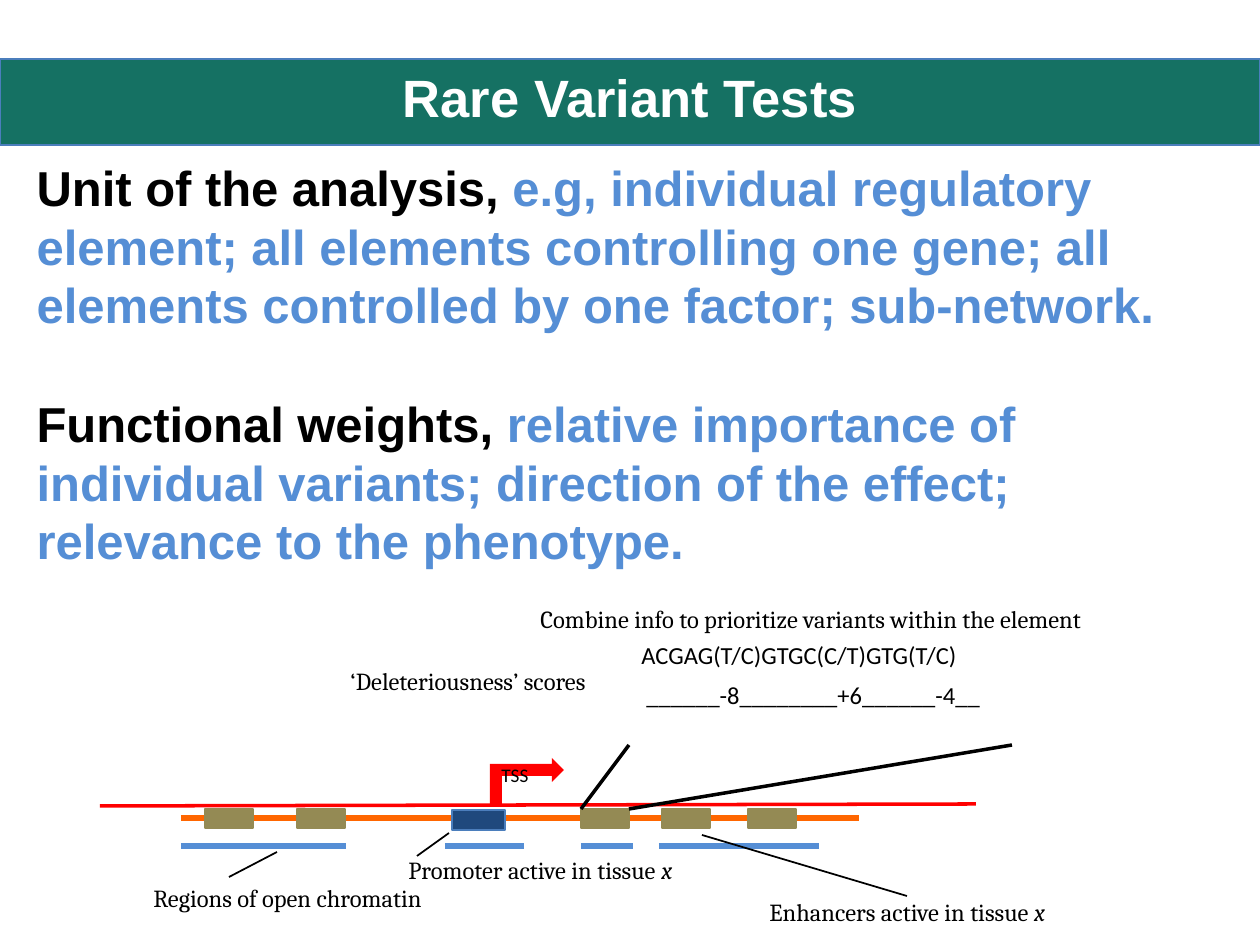
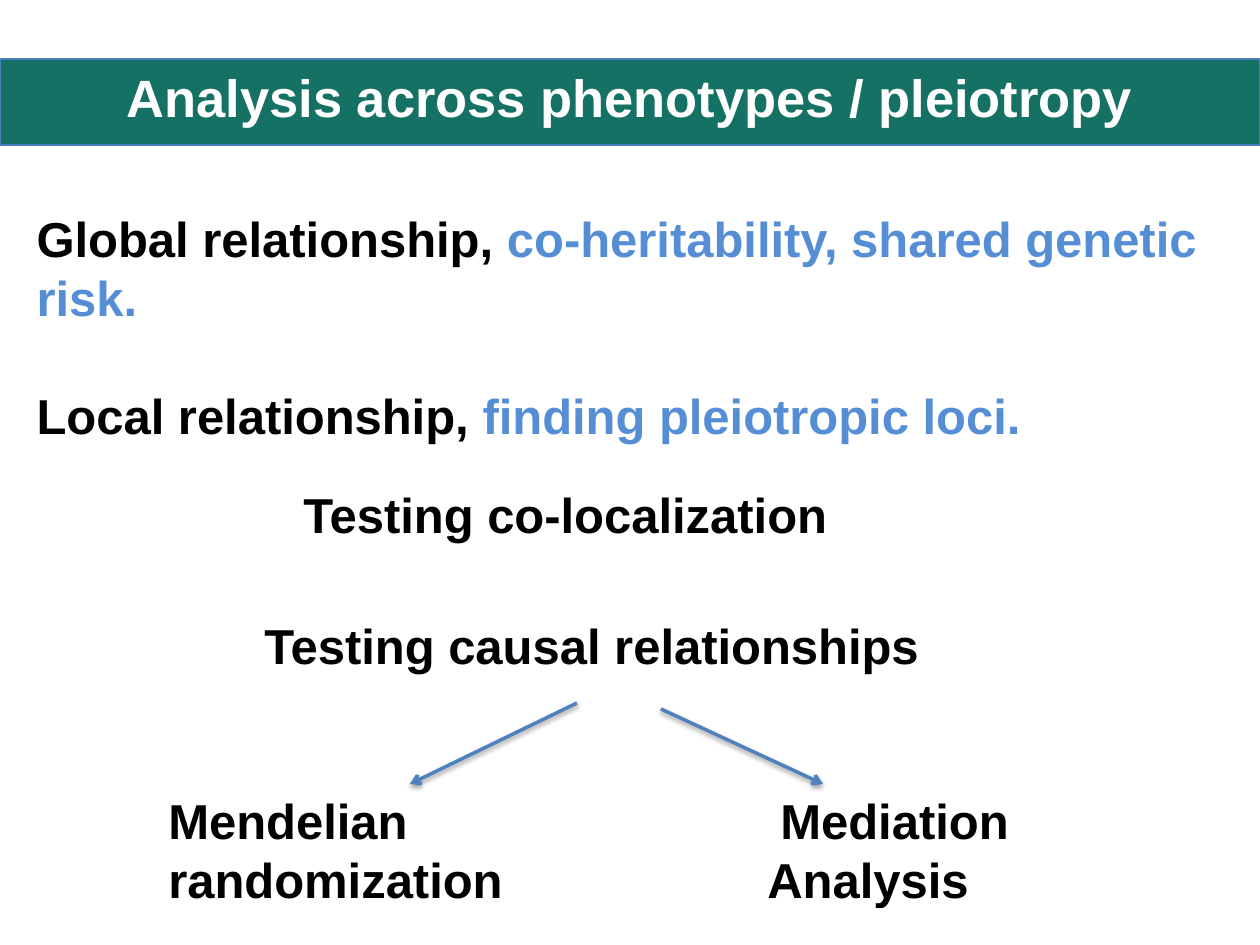
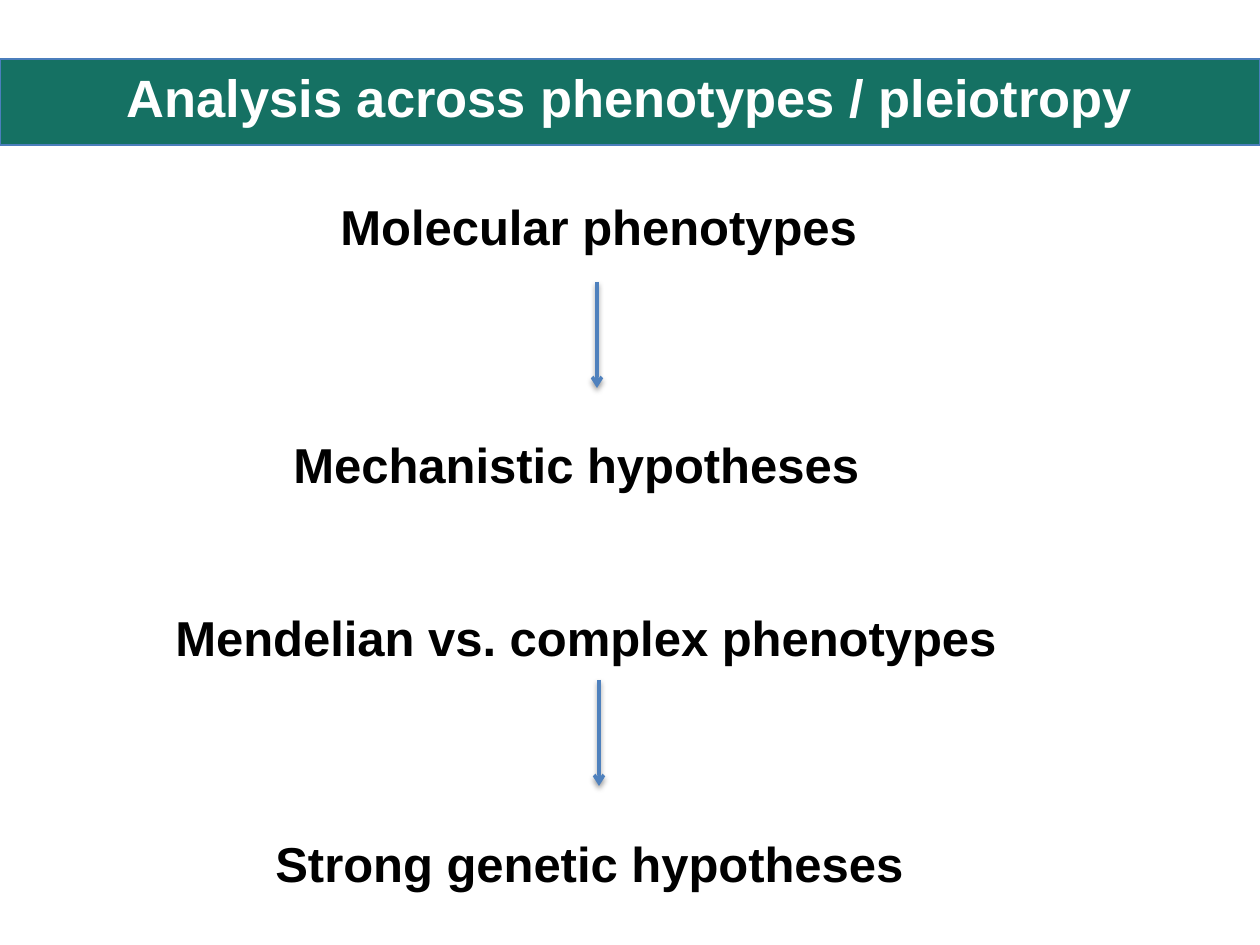
from lxml import etree
from pptx import Presentation, util as u
from pptx.dml.color import RGBColor
from pptx.enum import shapes, text
from pptx.oxml import ns

PX = 914400 / 126
BLACK, WHITE, GREEN, BLUE = "000000", "FFFFFF", "157163", "558ED5"
EDGE, ARROW, RED, TAN = "4B7EBC", "4F81BD", "FF0000", "948A54"
tint = RGBColor.from_string


def write(shape, box, paras, size=28, face="Arial", bold=True):
    shape.left, shape.top, shape.width, shape.height = [round(n * PX) for n in box]
    frame = shape.text_frame
    frame.word_wrap = True
    frame.auto_size = text.MSO_AUTO_SIZE.NONE
    frame.vertical_anchor = text.MSO_ANCHOR.TOP
    for i, runs in enumerate(paras):
        para = frame.add_paragraph() if i else frame.paragraphs[0]
        props = para._p.get_or_add_pPr()
        props.set("marL", "0")
        props.set("indent", "0")
        etree.SubElement(props, ns.qn("a:buNone"))
        para.space_before = u.Pt(34 if i else 0)
        para.font.size = u.Pt(size)
        para.font.name = face
        para.font.bold = bold
        for words, color, slant in runs:
            run = para.add_run()
            run.text = words
            run.font.color.rgb = tint(color)
            if slant:
                run.font.italic = True
    return frame


def draw(slide, ends, color, width, arrow=False):
    line = slide.shapes.add_connector(
        shapes.MSO_CONNECTOR.STRAIGHT, *[round(n * PX) for n in ends])
    line.line.color.rgb = tint(color)
    line.line.width = u.Pt(width)
    props = line.element.spPr
    glow = etree.SubElement(props, ns.qn("a:effectLst"))
    if arrow:
        etree.SubElement(props.find(ns.qn("a:ln")), ns.qn("a:tailEnd"), type="arrow")
        shade = etree.SubElement(glow, ns.qn("a:outerShdw"), blurRad="39400",
                                 dist="20300", dir="5400000", rotWithShape="0")
        black = etree.SubElement(shade, ns.qn("a:srgbClr"), val=BLACK)
        etree.SubElement(black, ns.qn("a:alpha"), val="38000")


deck = Presentation()
deck.slide_width, deck.slide_height = u.Inches(10), u.Inches(7.5)

pages = []
cross = "Analysis across phenotypes / pleiotropy"
for title, kind in (("Rare Variant Tests", 1), (cross, 1), (cross, 5)):
    slide = deck.slides.add_slide(deck.slide_layouts[kind])
    band = slide.shapes.add_shape(
        shapes.MSO_SHAPE.RECTANGLE, 0, round(59 * PX), deck.slide_width, round(86 * PX))
    band.shadow.inherit = False
    band.fill.solid()
    band.fill.fore_color.rgb = tint(GREEN)
    band.line.color.rgb = tint(EDGE)
    band.line.width = u.Pt(0.75)
    slide.shapes._spTree.insert(2, band.element)
    frame = write(slide.shapes.title, (0, 59, 1260, 77), [[(title, WHITE, False)]], 30)
    frame.paragraphs[0].alignment = text.PP_ALIGN.CENTER
    pages.append(slide)
rare, cause, hypo = pages

lists = (
    (rare, (24, 151, 1222, 428), (
        ("Unit of the analysis, ",
         "e.g, individual regulatory element; all elements controlling one gene; "
         "all elements controlled by one factor; sub-network."),
        ("Functional weights, ",
         "relative importance of individual variants; direction of the effect; "
         "relevance to the phenotype."))),
    (cause, (24, 202, 1222, 251), (
        ("Global relationship, ", "co-heritability, shared genetic risk."),
        ("Local relationship, ", "finding pleiotropic loci."))),
)
for slide, box, items in lists:
    write(slide.placeholders[1], box,
          [[(head, BLACK, False), (rest, BLUE, False)] for head, rest in items])

draw(rare, (100, 806, 976, 804), RED, 2)
turn = rare.shapes.add_shape(
    shapes.MSO_SHAPE.BENT_UP_ARROW, *[round(n * PX) for n in (503, 745, 48, 74)])
turn.shadow.inherit = False
turn.fill.solid()
turn.fill.fore_color.rgb = tint(RED)
turn.line.fill.background()
turn.rotation = 90
turn.element.spPr.find(ns.qn("a:xfrm")).set("flipH", "1")

draw(rare, (181, 818, 859, 818), "FF6600", 3.5)
blocks = [((452, 810, 53, 20), "1F497D", EDGE)]
blocks += [((x, 809, 48, 19), TAN, TAN) for x in (205, 297, 581, 662, 748)]
for box, fill, edge in blocks:
    block = rare.shapes.add_shape(
        shapes.MSO_SHAPE.RECTANGLE, *[round(n * PX) for n in box])
    block.shadow.inherit = False
    block.fill.solid()
    block.fill.fore_color.rgb = tint(fill)
    block.line.color.rgb = tint(edge)
    block.line.width = u.Pt(0.75)

for x, end in ((181, 346), (445, 524), (581, 633), (659, 819)):
    draw(rare, (x, 846, end, 846), BLUE, 3.5)
for ends in ((629, 745, 581, 809), (1012, 745, 629, 809)):
    draw(rare, ends, BLACK, 2)
for ends in ((277, 852, 229, 877), (702, 835, 907, 896), (449, 833, 417, 856)):
    draw(rare, ends, BLACK, 1)

labels = (
    ((629, 634, 359, 30), "ACGAG(T/C)GTGC(C/T)GTG(T/C)", "", 14, "Calibri"),
    ((634, 674, 373, 30), "______-8________+6______-4__", "", 14, "Calibri"),
    ((338, 660, 284, 30), "‘Deleteriousness’ scores", "", 14, "Cambria"),
    ((528, 598, 607, 30), "Combine info to prioritize variants within the element",
     "", 14, "Cambria"),
    ((489, 757, 57, 25), "TSS", "", 11, "Calibri"),
    ((757, 891, 326, 30), "Enhancers active in tissue ", "x", 14, "Cambria"),
    ((396, 849, 316, 30), "Promoter active in tissue ", "x", 14, "Cambria"),
    ((141, 877, 320, 30), "Regions of open chromatin", "", 14, "Cambria"),
)
for box, words, mark, size, face in labels:
    runs = [(words, BLACK, False)] + ([(mark, BLACK, True)] if mark else [])
    write(rare.shapes.add_textbox(0, 0, 0, 0), box, [runs], size, face, False)

notes = (
    (cause, (291, 478, 575, 72), "Testing co-localization", 0),
    (cause, (252, 609, 775, 72), "Testing causal relationships", 0),
    (cause, (156, 784, 375, 131), "Mendelian randomization", 0),
    (cause, (755, 784, 437, 131), "Mediation Analysis", 13),
    (hypo, (328, 190, 575, 72), "Molecular phenotypes", 0),
    (hypo, (281, 428, 634, 72), "Mechanistic hypotheses", 0),
    (hypo, (163, 601, 910, 72), "Mendelian vs. complex phenotypes", 0),
    (hypo, (263, 827, 708, 72), "Strong genetic hypotheses", 0),
)
for slide, box, words, dent in notes:
    frame = write(slide.shapes.add_textbox(0, 0, 0, 0), box, [[(words, BLACK, False)]])
    frame.paragraphs[0]._p.pPr.set("indent", str(round(dent * PX)))

arrows = (
    (cause, (577, 703, 410, 784)),
    (cause, (661, 709, 823, 784)),
    (hypo, (597, 282, 597, 388)),
    (hypo, (599, 680, 599, 786)),
)
for slide, ends in arrows:
    draw(slide, ends, ARROW, 2, True)

deck.save("out.pptx")
